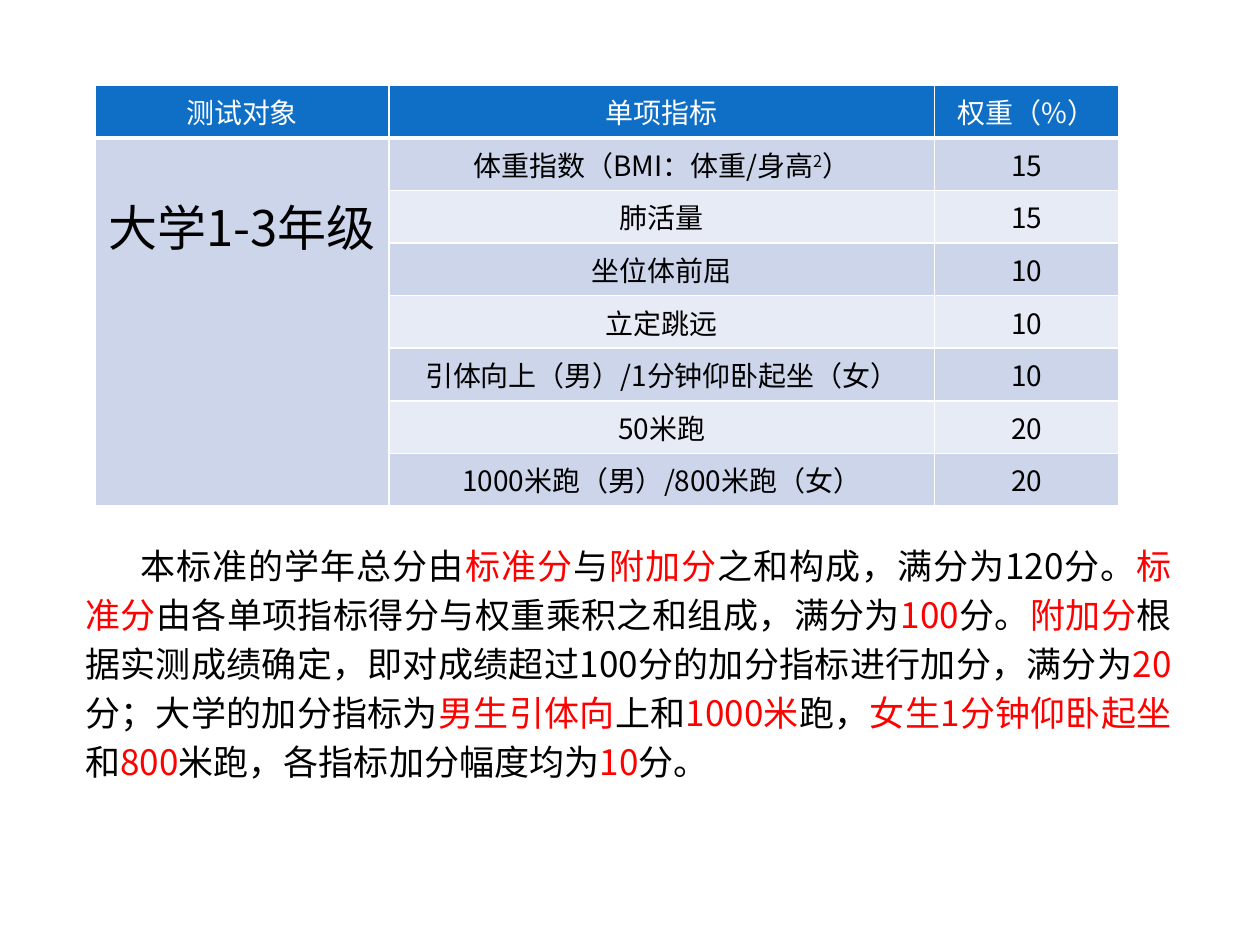
from lxml.etree import SubElement
from pptx import Presentation
from pptx.dml.color import RGBColor
from pptx.enum.text import MSO_ANCHOR, PP_ALIGN
from pptx.oxml.ns import qn
from pptx.util import Cm, Pt

FONT = "Noto Sans CJK SC"
COLORS = {
    "header": "0F6FC6",
    "odd band": "CCD5EA",
    "even band": "E7EBF5",
    "white": "FFFFFF",
    "text": "000000",
    "key": "FF0000",
}

HEADERS = ("测试对象", "单项指标", "权重（%）")
GROUP = "大学1-3年级"
# "^" encloses superscript text
INDICATORS = [
    ("体重指数（BMI：体重/身高^2^）", 15),
    ("肺活量", 15),
    ("坐位体前屈", 10),
    ("立定跳远", 10),
    ("引体向上（男）/1分钟仰卧起坐（女）", 10),
    ("50米跑", 20),
    ("1000米跑（男）/800米跑（女）", 20),
]
# "|" encloses highlighted text
EXPLANATION = (
    "本标准的学年总分由|标准分|与|附加分|之和构成，满分为120分。|标准分|"
    "由各单项指标得分与权重乘积之和组成，满分为|100|分。|附加分|"
    "根据实测成绩确定，即对成绩超过100分的加分指标进行加分，满分为|20|"
    "分；大学的加分指标为|男生引体向|上和|1000米|跑，|女生1分钟仰卧起坐|和|800|"
    "米跑，各指标加分幅度均为|10|分。"
)
COLUMN_WIDTHS = (5.92, 11, 3.71)
ROW_HEIGHT = 1.06


def rgb(name):
    return RGBColor.from_string(COLORS[name])


def write(para, text, size=16, color="text", align=PP_ALIGN.CENTER):
    """Add text, with |highlighted| and ^superscript^ parts."""
    para.alignment = align
    for i, part in enumerate(text.split("|")):
        for j, piece in enumerate(part.split("^")):
            span = para.add_run()
            span.text = piece
            span.font.size = Pt(size)
            span.font.color.rgb = rgb("key" if i % 2 else color)
            span.font.name = FONT
            properties = span._r.get_or_add_rPr()
            SubElement(properties, qn("a:ea"), typeface=FONT)
            if j % 2:
                properties.set("baseline", "30000")


def style_cell(cell, fill, bottom=1, top=1):
    """Set borders (in points), fill and margins."""
    properties = cell._tc.get_or_add_tcPr()
    for side, width in (("L", 1), ("R", 1), ("T", top), ("B", bottom)):
        line = SubElement(properties, qn(f"a:ln{side}"), w=str(Pt(width)))
        solid = SubElement(line, qn("a:solidFill"))
        SubElement(solid, qn("a:srgbClr"), val=COLORS["white"])
    cell.fill.solid()
    cell.fill.fore_color.rgb = rgb(fill)
    cell.margin_left = cell.margin_right = Cm(0.19)
    cell.margin_top = cell.margin_bottom = 0
    cell.vertical_anchor = MSO_ANCHOR.MIDDLE


def add_weight_table(page):
    rows = [HEADERS] + [("", name, str(weight)) for name, weight in INDICATORS]
    frame = page.shapes.add_table(
        len(rows), len(HEADERS), Cm(1.92), Cm(1.72),
        Cm(sum(COLUMN_WIDTHS)), Cm(ROW_HEIGHT * len(rows)))
    table = frame.table
    for column, width in zip(table.columns, COLUMN_WIDTHS):
        column.width = Cm(width)
    for r, texts in enumerate(rows):
        table.rows[r].height = Cm(ROW_HEIGHT)
        band = "odd band" if r % 2 else "even band"
        for c, text in enumerate(texts):
            cell = table.cell(r, c)
            style_cell(cell, band if r else "header",
                       bottom=1 if r else 3, top=3 if r == 1 else 1)
            if text:
                write(cell.text_frame.paragraphs[0], text,
                      color="text" if r else "white")
    group = table.cell(1, 0)
    group.merge(table.cell(len(INDICATORS), 0))
    group.vertical_anchor = MSO_ANCHOR.TOP
    group.margin_top = Cm(1.04)
    write(group.text_frame.paragraphs[0], GROUP, size=28)


def add_explanation(page):
    box = page.shapes.add_textbox(Cm(1.47), Cm(10.72), Cm(22.4), Cm(5.23))
    box.text_frame.word_wrap = True
    para = box.text_frame.paragraphs[0]
    para.line_spacing = Pt(28)
    para._p.get_or_add_pPr().set("indent", str(Cm(1.12)))
    write(para, EXPLANATION, size=20, align=PP_ALIGN.JUSTIFY)


def main():
    deck = Presentation()
    deck.slide_width, deck.slide_height = Cm(25.4), Cm(19.05)
    page = deck.slides.add_slide(deck.slide_layouts[6])
    add_weight_table(page)
    add_explanation(page)
    deck.save("out.pptx")


if __name__ == "__main__":
    main()
